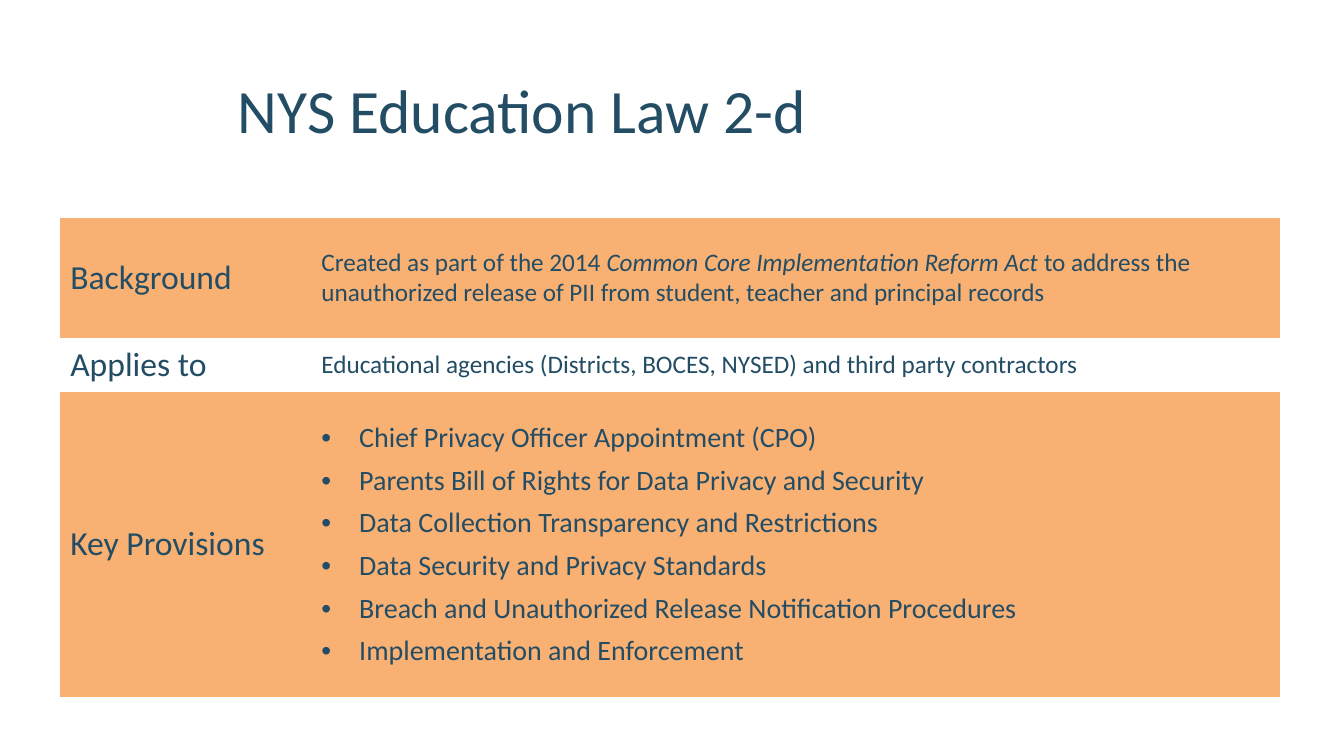
from pptx import Presentation
from pptx.dml.color import RGBColor
from pptx.enum.text import MSO_ANCHOR as Anchor
from pptx.oxml.ns import qn
from pptx.util import Pt
from lxml.etree import SubElement

FONT = "Calibri"
NAVY, ORANGE, WHITE = "234D64", "F9B073", "FFFFFF"
NO_GRID_STYLE = "{2D5ABB26-0587-4C30-8999-92F81FD0307C}"
INDENT = Pt(27)

BACKGROUND = [
    ("Created as part of the 2014 ", False),
    ("Common Core Implementation Reform Act ", True),
    ("to address the unauthorized release of PII from student, "
     "teacher and principal records", False),
]
APPLIES_TO = [
    ("Educational agencies (Districts, BOCES, NYSED) and third party contractors", False),
]
PROVISIONS = [
    "Chief Privacy Officer Appointment (CPO)",
    "Parents Bill of Rights for Data Privacy and Security",
    "Data Collection Transparency and Restrictions",
    "Data Security and Privacy Standards",
    "Breach and Unauthorized Release Notification Procedures",
    "Implementation and Enforcement",
]
LAW_ROWS = [
    ("Background", [BACKGROUND], 18, False, 85.7, ORANGE),
    ("Applies to", [APPLIES_TO], 18, False, 39, WHITE),
    ("Key Provisions", [[(item, False)] for item in PROVISIONS], 20, True, 217.4, ORANGE),
]


def color(code):
    """Turn a hex string into a colour."""
    return RGBColor.from_string(code)


def add_span(para, text, size, italic=False):
    """Add one run of navy text to a paragraph."""
    span = para.add_run()
    span.text = text
    span.font.name = FONT
    span.font.size = Pt(size)
    span.font.italic = italic
    span.font.color.rgb = color(NAVY)


def add_bullet(para):
    """Give a paragraph a hanging bullet and space after it."""
    para.space_after = Pt(6)
    properties = para._p.get_or_add_pPr()
    properties.set("marL", str(INDENT))
    properties.set("indent", str(-INDENT))
    SubElement(properties, qn("a:buFont"), typeface="Arial")
    SubElement(properties, qn("a:buChar"), char="•")


def fill_cell(cell, paragraphs, size, fill, bulleted=False):
    """Colour a table cell and write its paragraphs."""
    cell.fill.solid()
    cell.fill.fore_color.rgb = color(fill)
    cell.vertical_anchor = Anchor.MIDDLE
    frame = cell.text_frame
    for index, spans in enumerate(paragraphs):
        para = frame.add_paragraph() if index else frame.paragraphs[0]
        if bulleted:
            add_bullet(para)
        for text, italic in spans:
            add_span(para, text, size, italic)


def add_title(page, left, top, width, height):
    """Place the slide title in the given box."""
    box = page.shapes.add_textbox(Pt(left), Pt(top), Pt(width), Pt(height))
    frame = box.text_frame
    frame.word_wrap = True
    frame.vertical_anchor = Anchor.MIDDLE
    para = frame.paragraphs[0]
    para.line_spacing = 0.9
    add_span(para, "NYS Education Law 2-d", 44)


def add_law_table(page, left, top, width, height):
    """Place the table of the law's parts in the given box."""
    holder = page.shapes.add_table(
        len(LAW_ROWS), 2, Pt(left), Pt(top), Pt(width), Pt(height))
    table = holder.table
    table.first_row = False
    table.horz_banding = False
    holder.element.find(f".//{qn('a:tableStyleId')}").text = NO_GRID_STYLE
    label_width = 179.4
    table.columns[0].width = Pt(label_width)
    table.columns[1].width = Pt(width - label_width)
    for index, (label, paragraphs, size, bulleted, row_height, fill) in enumerate(LAW_ROWS):
        table.rows[index].height = Pt(row_height)
        fill_cell(table.cell(index, 0), [[(label, False)]], 24, fill)
        fill_cell(table.cell(index, 1), paragraphs, size, fill, bulleted)


def main():
    """Build the slide and save the deck."""
    deck = Presentation()
    deck.slide_width, deck.slide_height = Pt(960), Pt(540)
    page = deck.slides.add_slide(deck.slide_layouts[6])
    page.background.fill.solid()
    page.background.fill.fore_color.rgb = color(WHITE)
    add_title(page, 162.7, 28.8, 684.7, 104.4)
    add_law_table(page, 43, 155.6, 871.3, 342.1)
    deck.save("out.pptx")


if __name__ == "__main__":
    main()
